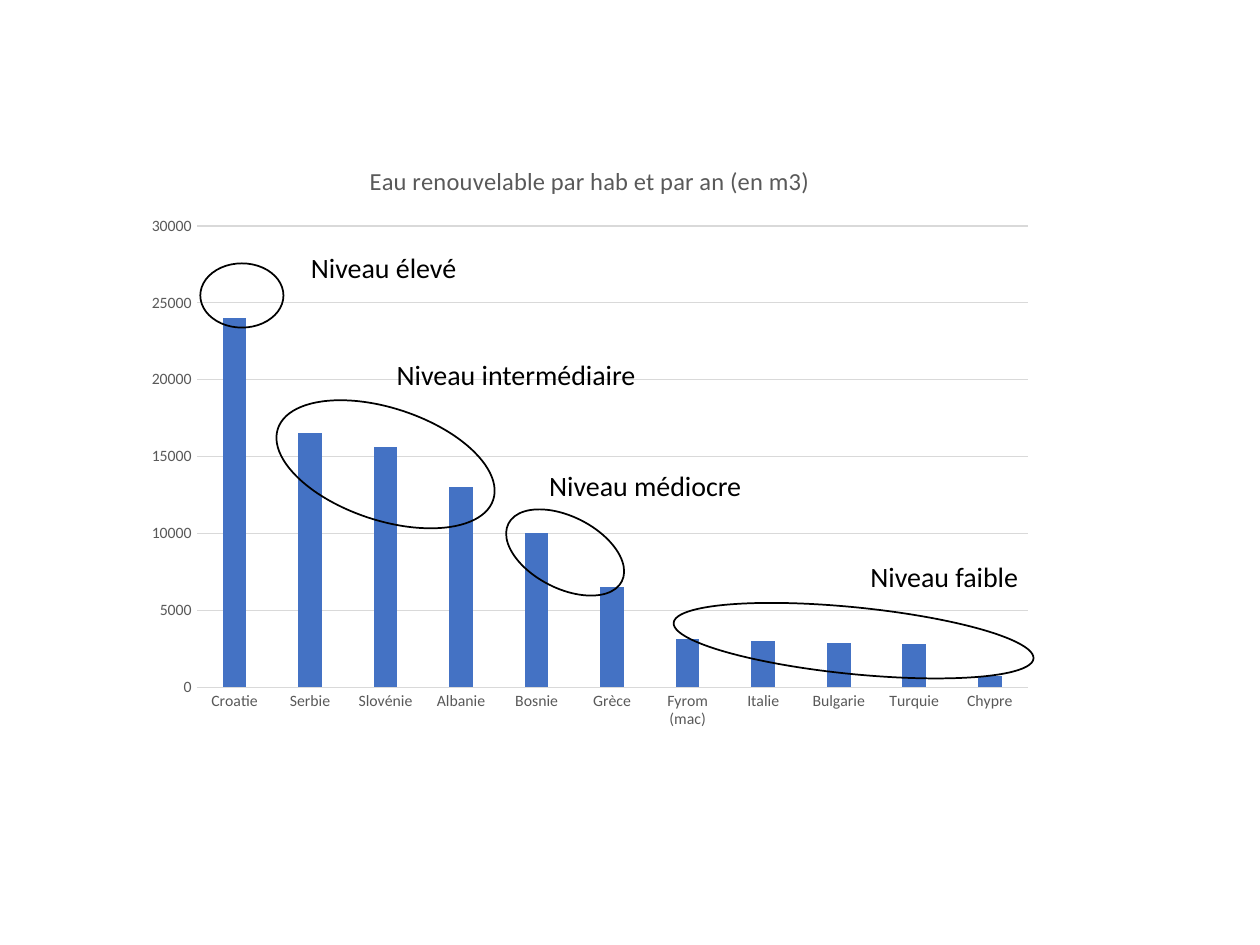
from pptx import Presentation
from pptx.chart.data import CategoryChartData
from pptx.dml.color import RGBColor
from pptx.enum.chart import XL_CHART_TYPE, XL_TICK_MARK
from pptx.enum.shapes import MSO_SHAPE
from pptx.enum.text import MSO_AUTO_SIZE
from pptx.util import Inches, Pt

COLUMNS = XL_CHART_TYPE.COLUMN_CLUSTERED
NO_TICK = XL_TICK_MARK.NONE
OVAL = MSO_SHAPE.OVAL
GROW = MSO_AUTO_SIZE.SHAPE_TO_FIT_TEXT

THEME = {
    "font": "Calibri",
    "ink": RGBColor.from_string("000000"),
    "muted": RGBColor.from_string("595959"),
    "grid": RGBColor.from_string("D9D9D9"),
    "bar": RGBColor.from_string("4472C4"),
    "title_size": Pt(14),
    "axis_size": Pt(9),
    "level_size": Pt(16),
    "grid_width": Pt(0.75),
    "ring_width": Pt(1),
}

WATER = {
    "Croatie": 24000,
    "Serbie": 16500,
    "Slovénie": 15600,
    "Albanie": 13000,
    "Bosnie": 10000,
    "Grèce": 6500,
    "Fyrom (mac)": 3100,
    "Italie": 3000,
    "Bulgarie": 2900,
    "Turquie": 2800,
    "Chypre": 700,
}

LEVELS = [
    ("Niveau élevé", (2.37, 1.94, 1.37, 0.37), (1.59, 2.09, 0.66, 0.51), 0),
    ("Niveau intermédiaire", (3.05, 2.79, 2.12, 0.37), (2.16, 3.24, 1.8, 0.89), 18.3),
    ("Niveau médiocre", (4.26, 3.67, 1.75, 0.37), (3.98, 4.1, 1.01, 0.57), 27),
    ("Niveau faible", (6.81, 4.39, 1.39, 0.37), (5.34, 4.82, 2.87, 0.53), 5.7),
]


def set_font(font, size, color):
    values = {"name": THEME["font"], "size": size, "bold": False}
    for attribute, value in values.items():
        setattr(font, attribute, value)
    font.color.rgb = color


def set_line(line, color, width):
    line.color.rgb = color
    line.width = width


presentation = Presentation()
presentation.slide_width = Inches(10)
presentation.slide_height = Inches(7.5)
slide = presentation.slides.add_slide(presentation.slide_layouts[6])

water_data = CategoryChartData()
water_data.categories = list(WATER)
water_data.add_series("Eau renouvelable", list(WATER.values()))
chart_box = map(Inches, (1.06, 1.12, 7.24, 4.76))
chart = slide.shapes.add_chart(COLUMNS, *chart_box, water_data).chart
chart.has_legend = False
chart.has_title = True
set_font(chart.font, THEME["axis_size"], THEME["muted"])

title = chart.chart_title.text_frame
title.text = "Eau renouvelable par hab et par an (en m3)"
set_font(title.paragraphs[0].runs[0].font, THEME["title_size"], THEME["muted"])

countries, volumes = chart.category_axis, chart.value_axis
for axis in (countries, volumes):
    axis.major_tick_mark = NO_TICK
    axis.minor_tick_mark = NO_TICK
    set_font(axis.tick_labels.font, THEME["axis_size"], THEME["muted"])
set_line(countries.format.line, THEME["grid"], THEME["grid_width"])
volumes.format.line.fill.background()
set_line(volumes.major_gridlines.format.line, THEME["grid"], THEME["grid_width"])
scale = {"minimum_scale": 0, "maximum_scale": 30000, "major_unit": 5000}
for attribute, value in scale.items():
    setattr(volumes, attribute, value)

columns = chart.plots[0]
for attribute, value in {"gap_width": 219, "overlap": -27, "vary_by_categories": False}.items():
    setattr(columns, attribute, value)
bars = columns.series[0].format.fill
bars.solid()
bars.fore_color.rgb = THEME["bar"]

for _, _, ring_box, angle in LEVELS:
    ring = slide.shapes.add_shape(OVAL, *map(Inches, ring_box))
    ring.rotation = angle
    ring.shadow.inherit = False
    ring.fill.background()
    set_line(ring.line, THEME["ink"], THEME["ring_width"])

for level, label_box, _, _ in LEVELS:
    label = slide.shapes.add_textbox(*map(Inches, label_box)).text_frame
    label.word_wrap = False
    label.auto_size = GROW
    label.text = level
    set_font(label.paragraphs[0].runs[0].font, THEME["level_size"], THEME["ink"])

presentation.save("out.pptx")
